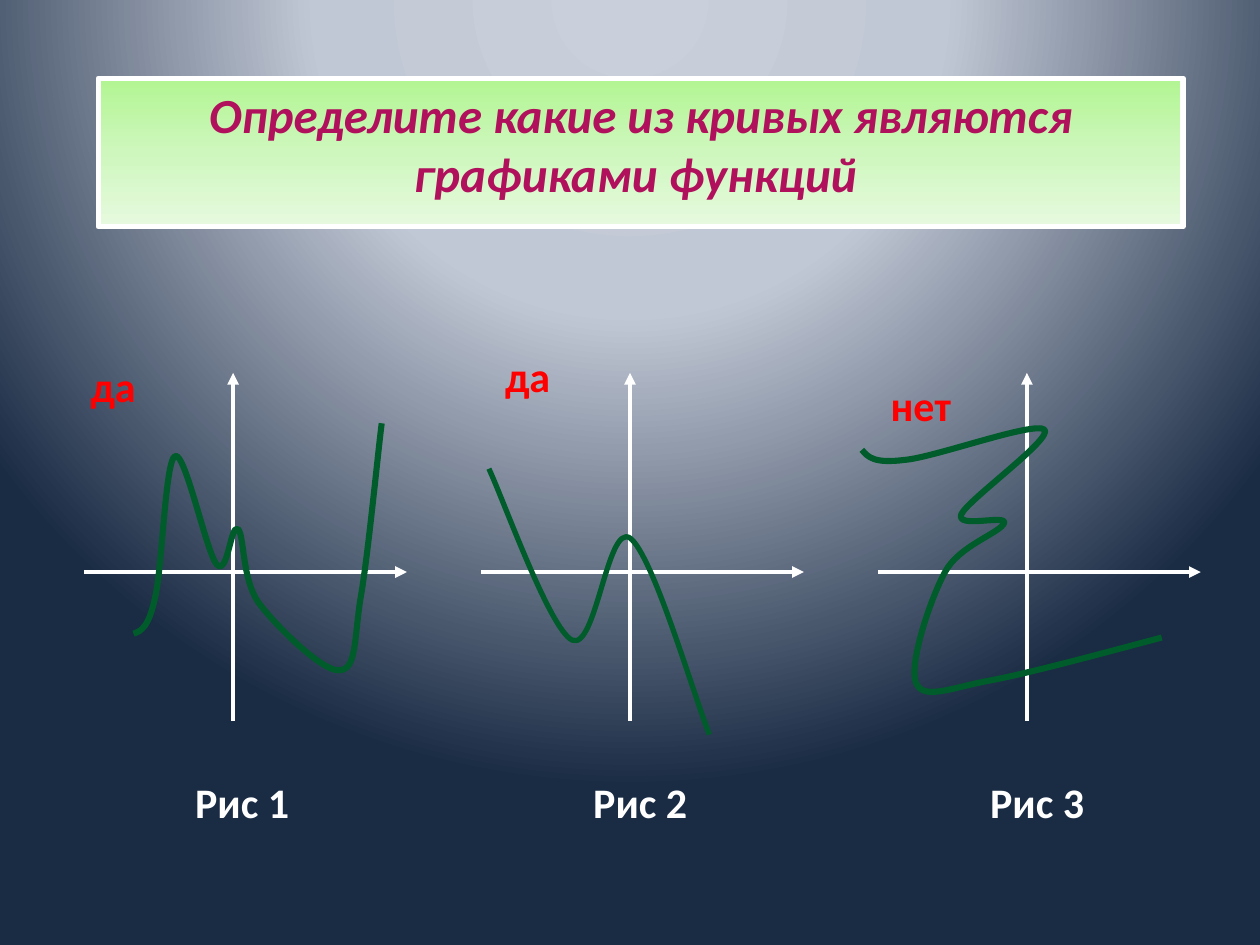
from dataclasses import dataclass

from lxml import etree
from pptx import Presentation
from pptx.dml.color import RGBColor
from pptx.enum.shapes import MSO_CONNECTOR, MSO_SHAPE
from pptx.enum.text import MSO_ANCHOR, MSO_AUTO_SIZE, PP_ALIGN
from pptx.oxml.ns import qn
from pptx.util import Inches, Pt

RECTANGLE = MSO_SHAPE.RECTANGLE
STRAIGHT = MSO_CONNECTOR.STRAIGHT
TOP = MSO_ANCHOR.TOP
GROW = MSO_AUTO_SIZE.SHAPE_TO_FIT_TEXT
CENTER = PP_ALIGN.CENTER
LEFT = PP_ALIGN.LEFT


@dataclass(frozen=True)
class Theme:
    font: str = "Calibri"
    title_size: int = 28
    label_size: int = 24
    title_color: str = "B0105C"
    answer_color: str = "FF0000"
    light: str = "FFFFFF"
    curve_color: str = "005C2A"
    axis_width: float = 2.25
    border_width: float = 3
    background_stops: tuple = ((0, "CAD0DB"), (40, "C1C8D5"), (100, "1A2B44"))
    banner_stops: tuple = ((0, "B2F592"), (50, "CEF7BD"), (100, "E7FADF"))


THEME = Theme()
FIRST_ORIGIN = 1.85
FIGURE_STEP = 3.15
AXIS_Y = 4.54

# Each curve is a start point, then two control points and an end point per bend.
FIGURES = (
    {
        "caption": "Рис 1", "caption_box": (1.45, 1.11),
        "answer": "да", "answer_box": (0.62, 2.81, 0.61), "curve_width": 3.5,
        "curve": (
            (1.06, 5.03),
            (1.12, 5.01), (1.18, 4.98), (1.23, 4.75),
            (1.29, 4.51), (1.31, 3.66), (1.39, 3.62),
            (1.47, 3.58), (1.64, 4.39), (1.72, 4.48),
            (1.81, 4.58), (1.83, 4.15), (1.89, 4.2),
            (1.94, 4.25), (1.92, 4.59), (2.05, 4.78),
            (2.19, 4.97), (2.56, 5.33), (2.69, 5.32),
            (2.83, 5.32), (2.81, 5.09), (2.86, 4.76),
            (2.92, 4.43), (3, 3.59), (3.03, 3.36),
        ),
    },
    {
        "caption": "Рис 2", "caption_box": (4.61, 1.16),
        "answer": "да", "answer_box": (3.91, 2.73, 0.61), "curve_width": 3,
        "curve": (
            (3.88, 3.72),
            (3.99, 3.95), (4.36, 4.99), (4.54, 5.08),
            (4.73, 5.17), (4.82, 4.15), (5, 4.27),
            (5.18, 4.4), (5.5, 5.5), (5.63, 5.83),
        ),
    },
    {
        "caption": "Рис 3", "caption_box": (7.76, 1.16),
        "answer": "нет", "answer_box": (6.97, 2.96, 0.82), "curve_width": 3.5,
        "curve": (
            (6.84, 3.57),
            (6.89, 3.63), (6.94, 3.68), (7.18, 3.65),
            (7.42, 3.63), (8.21, 3.34), (8.29, 3.41),
            (8.36, 3.48), (7.69, 3.96), (7.63, 4.08),
            (7.58, 4.2), (7.99, 4.08), (7.97, 4.15),
            (7.94, 4.23), (7.61, 4.33), (7.5, 4.54),
            (7.38, 4.76), (7.21, 5.28), (7.27, 5.42),
            (7.33, 5.56), (7.54, 5.46), (7.86, 5.4),
            (8.19, 5.34), (8.99, 5.12), (9.22, 5.06),
        ),
    },
)


def set_line(line, color, width):
    line.color.rgb = RGBColor.from_string(color)
    line.width = Pt(width)


def set_gradient(fill, element, stops):
    """Give the fill these stops and return its gradient element, still without direction."""
    fill.gradient()
    gradient = next(element.iter(qn("a:gradFill")))
    for child in list(gradient):
        gradient.remove(child)
    stop_list = etree.SubElement(gradient, qn("a:gsLst"))
    for position, color in stops:
        stop = etree.SubElement(stop_list, qn("a:gs"), pos=str(position * 1000))
        etree.SubElement(stop, qn("a:srgbClr"), val=color)
    return gradient


def paint_background(slide):
    gradient = set_gradient(slide.background.fill, slide.element, THEME.background_stops)
    path = etree.SubElement(gradient, qn("a:path"))
    path.set("path", "circle")
    etree.SubElement(path, qn("a:fillToRect"), l="50000", t="-80000", r="50000", b="180000")


def write_text(shape, text, *, size, color, italic=False, align=LEFT):
    paragraph = shape.text_frame.paragraphs[0]
    paragraph.alignment = align
    run = paragraph.add_run()
    run.text = text
    font = run.font
    font.name = THEME.font
    font.size = Pt(size)
    font.bold = True
    font.italic = italic
    font.color.rgb = RGBColor.from_string(color)


def add_banner(slide, text):
    shape = slide.shapes.add_shape(RECTANGLE, Inches(0.78), Inches(0.62), Inches(8.61), Inches(1.18))
    shape.shadow.inherit = False
    gradient = set_gradient(shape.fill, shape.element, THEME.banner_stops)
    etree.SubElement(gradient, qn("a:lin"), ang="5400000", scaled="0")
    set_line(shape.line, THEME.light, THEME.border_width)
    shape.text_frame.word_wrap = True
    shape.text_frame.vertical_anchor = TOP
    write_text(shape, text, size=THEME.title_size, color=THEME.title_color, italic=True, align=CENTER)


def add_label(slide, text, left, top, width, color):
    box = slide.shapes.add_textbox(Inches(left), Inches(top), Inches(width), Inches(0.5))
    box.text_frame.word_wrap = False
    box.text_frame.auto_size = GROW
    write_text(box, text, size=THEME.label_size, color=color)


def add_arrow(slide, start, end):
    points = [Inches(value) for value in (*start, *end)]
    arrow = slide.shapes.add_connector(STRAIGHT, *points)
    set_line(arrow.line, THEME.light, THEME.axis_width)
    properties = arrow.element.spPr
    etree.SubElement(properties.find(qn("a:ln")), qn("a:tailEnd"), type="triangle")
    etree.SubElement(properties, qn("a:effectLst"))


def add_axes(slide, origin):
    add_arrow(slide, (origin - 1.18, AXIS_Y), (origin + 1.38, AXIS_Y))
    add_arrow(slide, (origin, 5.72), (origin, 2.96))


def add_curve(slide, points, width):
    """Build an outline through all points, then join each three segments into a Bezier bend."""
    start, *rest = [(Inches(x), Inches(y)) for x, y in points]
    builder = slide.shapes.build_freeform(*start)
    builder.add_line_segments(rest, close=False)
    curve = builder.convert_to_shape()
    curve.shadow.inherit = False
    curve.fill.background()
    set_line(curve.line, THEME.curve_color, width)
    outline = next(curve.element.iter(qn("a:path")))
    segments = outline.findall(qn("a:lnTo"))
    for index in range(0, len(segments), 3):
        bend = etree.SubElement(outline, qn("a:cubicBezTo"))
        for segment in segments[index:index + 3]:
            bend.append(segment[0])
            outline.remove(segment)


def add_figure(slide, index, figure):
    add_axes(slide, FIRST_ORIGIN + index * FIGURE_STEP)
    add_curve(slide, figure["curve"], figure["curve_width"])
    left, width = figure["caption_box"]
    add_label(slide, figure["caption"], left, 6.11, width, THEME.light)
    add_label(slide, figure["answer"], *figure["answer_box"], THEME.answer_color)


def main():
    presentation = Presentation()
    presentation.slide_width = Inches(10)
    presentation.slide_height = Inches(7.5)
    slide = presentation.slides.add_slide(presentation.slide_layouts[6])
    paint_background(slide)
    add_banner(slide, "Определите какие из кривых являются графиками функций ")
    for index, figure in enumerate(FIGURES):
        add_figure(slide, index, figure)
    presentation.save("out.pptx")


if __name__ == "__main__":
    main()
